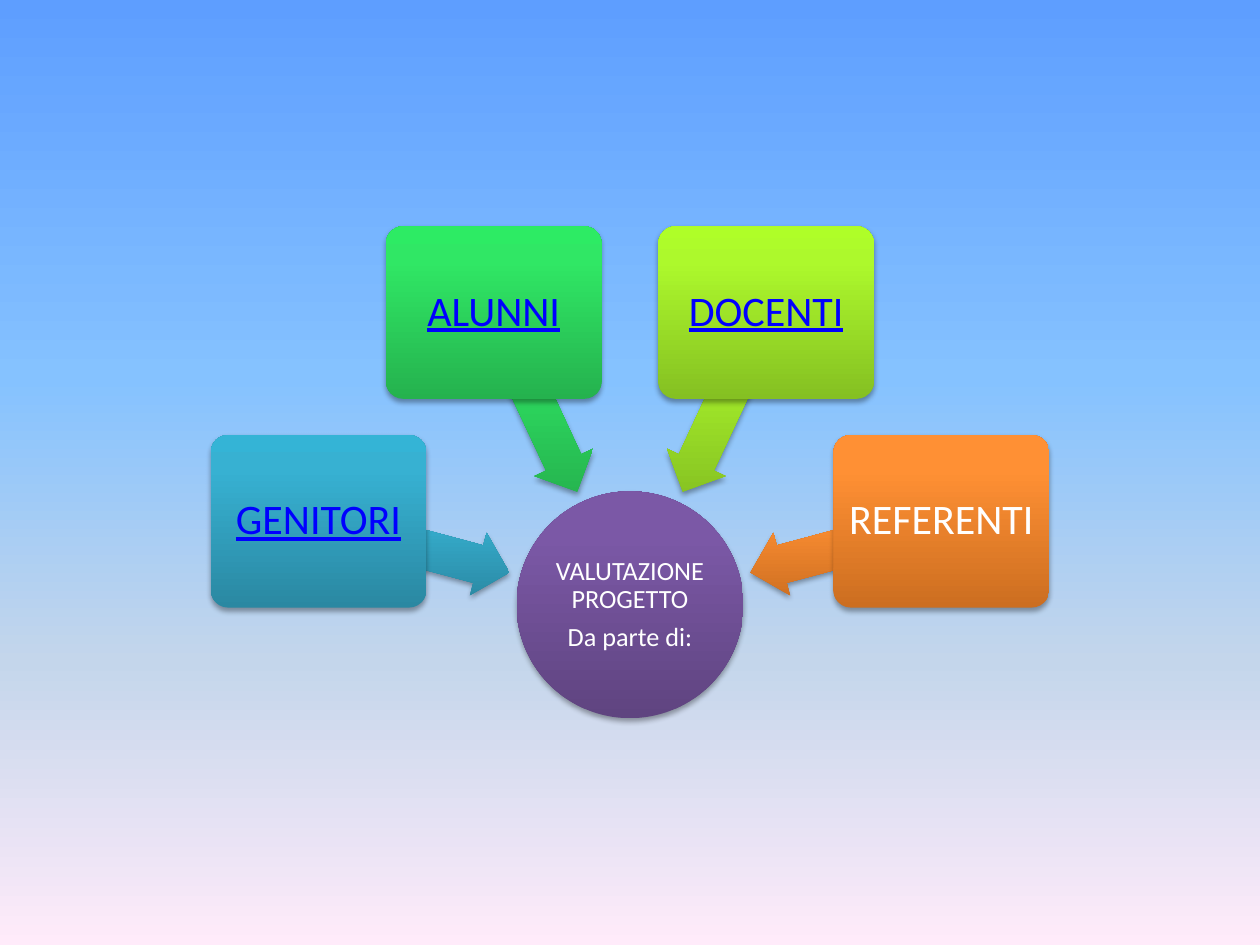
"""Build a slide with four groups of evaluators pointing at a project hub."""
from math import cos, radians, sin

from lxml.etree import SubElement
from pptx import Presentation
from pptx.dml.color import RGBColor
from pptx.enum.shapes import MSO_SHAPE as Shape
from pptx.enum.text import MSO_ANCHOR as Anchor, PP_ALIGN as Align
from pptx.oxml.ns import qn
from pptx.util import Pt

FONT = "Calibri"
WHITE, LINK_BLUE = "FFFFFF", "0000FF"
SKY = [(0, "5E9EFF"), (40, "85C2FF"), (70, "C4D6EB"), (100, "FFEBFA")]
HUB_LINES = ["VALUTAZIONE PROGETTO", "Da parte di:"]
HUB_COLORS = ("5F4480", "7B58A6", "7C57A8")
EVALUATORS = [
    ("GENITORI", 195, ("2A88A2", "37B1D2", "34B4D6"), True),
    ("ALUNNI", 245, ("25B24E", "30E765", "2DEB64"), True),
    ("DOCENTI", 295, ("85C022", "ADF92C", "AFFE28"), True),
    ("REFERENTI", 345, ("CC6E20", "FF9034", "FF9136"), False),
]
HUB_CENTER = (360, 345.6)
HUB_SIZE, ARROW_SIZE, BOX_SIZE = (129.6, 129.6), (113, 37), (123.2, 98.6)
ARROW_RADIUS, BOX_RADIUS = 127.8, 184.2


def rgb(color):
    return RGBColor.from_string(color)


def set_gradient(owner, fill, stops, angle):
    fill.gradient()
    fill.gradient_angle = angle
    gradient = next(owner.element.iter(qn("a:gradFill")))
    gradient.set("rotWithShape", "0")
    stop_list = gradient.find(qn("a:gsLst"))
    for stop in list(stop_list):
        stop_list.remove(stop)
    for position, color in stops:
        stop = SubElement(stop_list, qn("a:gs"), pos=str(position * 1000))
        SubElement(stop, qn("a:srgbClr"), val=color)


def add_shadow(shape):
    shape.shadow.inherit = False
    effects = next(shape.element.iter(qn("a:effectLst")))
    shadow = SubElement(effects, qn("a:outerShdw"), blurRad=str(Pt(3.1)),
                        dist=str(Pt(1.8)), dir="5400000", rotWithShape="0")
    color = SubElement(shadow, qn("a:srgbClr"), val="000000")
    SubElement(color, qn("a:alpha"), val="35000")


def from_hub(angle, radius):
    x, y = HUB_CENTER
    return x + radius * cos(radians(angle)), y + radius * sin(radians(angle))


def add_shape(slide, kind, center, size, colors, adjustments=()):
    (x, y), (width, height) = center, size
    shape = slide.shapes.add_shape(kind, Pt(x - width / 2), Pt(y - height / 2),
                                   Pt(width), Pt(height))
    for index, value in enumerate(adjustments):
        shape.adjustments[index] = value
    set_gradient(shape, shape.fill, zip((0, 80, 100), colors), 90)
    shape.line.fill.background()
    add_shadow(shape)
    return shape


def add_text(shape, lines, size, inset, color=WHITE, underline=False):
    frame = shape.text_frame
    frame.word_wrap = True
    frame.vertical_anchor = Anchor.MIDDLE
    frame.margin_left = frame.margin_right = Pt(inset)
    frame.margin_top = frame.margin_bottom = Pt(inset)
    for index, line in enumerate(lines):
        paragraph = frame.add_paragraph() if index else frame.paragraphs[0]
        paragraph.alignment = Align.CENTER
        paragraph.line_spacing = 0.9
        paragraph.space_after = Pt(size * 0.35)
        run = paragraph.add_run()
        run.text = line
        run.font.name = FONT
        run.font.size = Pt(size)
        run.font.underline = underline
        run.font.color.rgb = rgb(color)


def main():
    presentation = Presentation()
    presentation.slide_width, presentation.slide_height = Pt(720), Pt(540)
    slide = presentation.slides.add_slide(presentation.slide_layouts[6])
    set_gradient(slide, slide.background.fill, SKY, 270)

    hub = add_shape(slide, Shape.OVAL, HUB_CENTER, HUB_SIZE, HUB_COLORS)
    add_text(hub, HUB_LINES, 15, 0.75)
    for name, angle, colors, linked in EVALUATORS:
        arrow = add_shape(slide, Shape.LEFT_ARROW, from_hub(angle, ARROW_RADIUS),
                          ARROW_SIZE, colors, (0.6, 0.5))
        arrow.rotation = angle
        box = add_shape(slide, Shape.ROUNDED_RECTANGLE, from_hub(angle, BOX_RADIUS),
                        BOX_SIZE, colors, (0.1,))
        add_text(box, [name], 24, 3.6, LINK_BLUE if linked else WHITE, linked)

    presentation.save("out.pptx")


if __name__ == "__main__":
    main()
